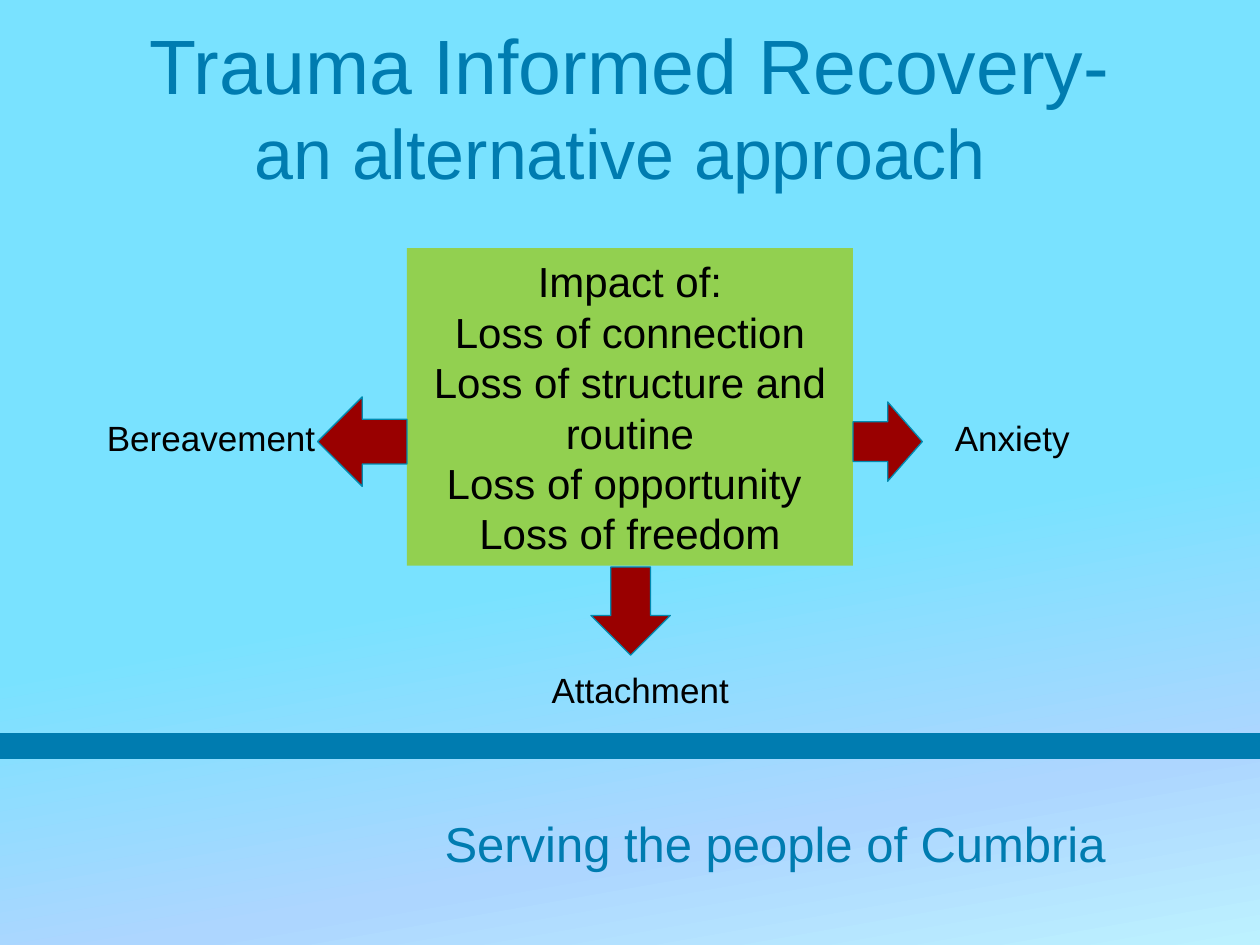
from lxml.etree import SubElement
from pptx import Presentation
from pptx.dml.color import RGBColor
from pptx.enum.shapes import MSO_CONNECTOR, MSO_SHAPE
from pptx.enum.text import MSO_ANCHOR, MSO_AUTO_SIZE, PP_ALIGN
from pptx.oxml.ns import qn
from pptx.util import Inches, Pt

COLORS = {
    "brand": "007CB0",
    "text": "000000",
    "box": "92D050",
    "arrow": "990000",
    "outline": "008AB0",
}
BACKGROUND = [(0, "79E2FF"), (58, "79E2FF"), (83, "ADD6FF"), (100, "BCF1FF")]
LOSSES = [
    "Impact of:",
    "Loss of connection",
    "Loss of structure and routine",
    "Loss of opportunity ",
    "Loss of freedom",
]
EFFECTS = [
    ("Bereavement", 0.75, 3.26, MSO_SHAPE.LEFT_ARROW, (2.52, 3.15, 0.71, 0.71)),
    ("Anxiety", 7.48, 3.26, MSO_SHAPE.RIGHT_ARROW, (6.77, 3.19, 0.55, 0.63)),
    ("Attachment", 4.28, 5.26, MSO_SHAPE.DOWN_ARROW, (4.69, 4.5, 0.63, 0.7)),
]


def rgb(name):
    """Return the palette colour with this name."""
    return RGBColor.from_string(COLORS[name])


def add_text(p, text, size=20, color="text", align=None):
    """Append a formatted run to a paragraph."""
    p.alignment = align
    r = p.add_run()
    r.text = text
    r.font.name = "Arial"
    r.font.size = Pt(size)
    r.font.color.rgb = rgb(color)


class SlideBuilder:
    """Hold the current slide and draw each kind of element in its style."""

    def __init__(self, prs):
        """Add a slide with a title placeholder."""
        self.s = prs.slides.add_slide(prs.slide_layouts[5])

    def background(self, stops, angle):
        """Fill the background with a linear gradient, angle clockwise."""
        fill = self.s.background.fill
        fill.gradient()
        fill.gradient_angle = 360 - angle
        gs_list = next(self.s.element.iter(qn("a:gsLst")))
        for gs in list(gs_list):
            gs_list.remove(gs)
        for pos, color in stops:
            gs = SubElement(gs_list, qn("a:gs"), pos=str(pos * 1000))
            SubElement(gs, qn("a:srgbClr"), val=color)

    def frame(self, sp, anchor=MSO_ANCHOR.TOP):
        """Return the text frame of a shape, set to wrap at a fixed size."""
        tf = sp.text_frame
        tf.word_wrap = True
        tf.auto_size = MSO_AUTO_SIZE.NONE
        tf.vertical_anchor = anchor
        return tf

    def title(self, box, parts):
        """Move the title and fill it with runs of (text, size)."""
        sp = self.s.shapes.title
        sp.left, sp.top, sp.width, sp.height = map(Inches, box)
        p = self.frame(sp, MSO_ANCHOR.MIDDLE).paragraphs[0]
        for text, size in parts:
            add_text(p, text, size, "brand", PP_ALIGN.CENTER)

    def text(self, box, text, **style):
        """Add a one-paragraph text box."""
        sp = self.s.shapes.add_textbox(*map(Inches, box))
        add_text(self.frame(sp).paragraphs[0], text, **style)

    def shape(self, kind, box, fill, outline=None):
        """Add a flat preset shape."""
        sp = self.s.shapes.add_shape(kind, *map(Inches, box))
        sp.shadow.inherit = False
        sp.fill.solid()
        sp.fill.fore_color.rgb = rgb(fill)
        if outline:
            sp.line.color.rgb = rgb(outline)
            sp.line.width = Pt(0.75)
        else:
            sp.line.fill.background()
        return sp

    def panel(self, box, lines):
        """Add a filled box of centred lines."""
        sp = self.shape(MSO_SHAPE.RECTANGLE, box, "box")
        tf = self.frame(sp, MSO_ANCHOR.MIDDLE)
        for i, line in enumerate(lines):
            p = tf.add_paragraph() if i else tf.paragraphs[0]
            add_text(p, line, 24, align=PP_ALIGN.CENTER)

    def rule(self, y, width):
        """Draw a horizontal line across the slide."""
        line = self.s.shapes.add_connector(
            MSO_CONNECTOR.STRAIGHT, Inches(10), Inches(y), 0, Inches(y))
        line.line.color.rgb = rgb("brand")
        line.line.width = Pt(width)
        SubElement(line._element.spPr, qn("a:effectLst"))


def main():
    """Build and save the slide."""
    prs = Presentation()
    prs.slide_width, prs.slide_height = Inches(10), Inches(7.5)
    slide = SlideBuilder(prs)
    slide.background(BACKGROUND, 80)
    slide.rule(5.92, 15)
    slide.text((3.43, 6.41, 5.91, 0.57), "Serving the people of Cumbria",
               size=28, color="brand")
    slide.title((0.75, 0.67, 8.5, 0.33),
                [("Trauma Informed Recovery- ", 44), ("an alternative approach ", 40)])
    slide.panel((3.23, 1.97, 3.54, 2.52), LOSSES)
    for label, left, top, arrow, box in EFFECTS:
        slide.shape(arrow, box, "arrow", "outline")
        slide.text((left, top, 1.9, 0.43), label)
    prs.save("out.pptx")


if __name__ == "__main__":
    main()
